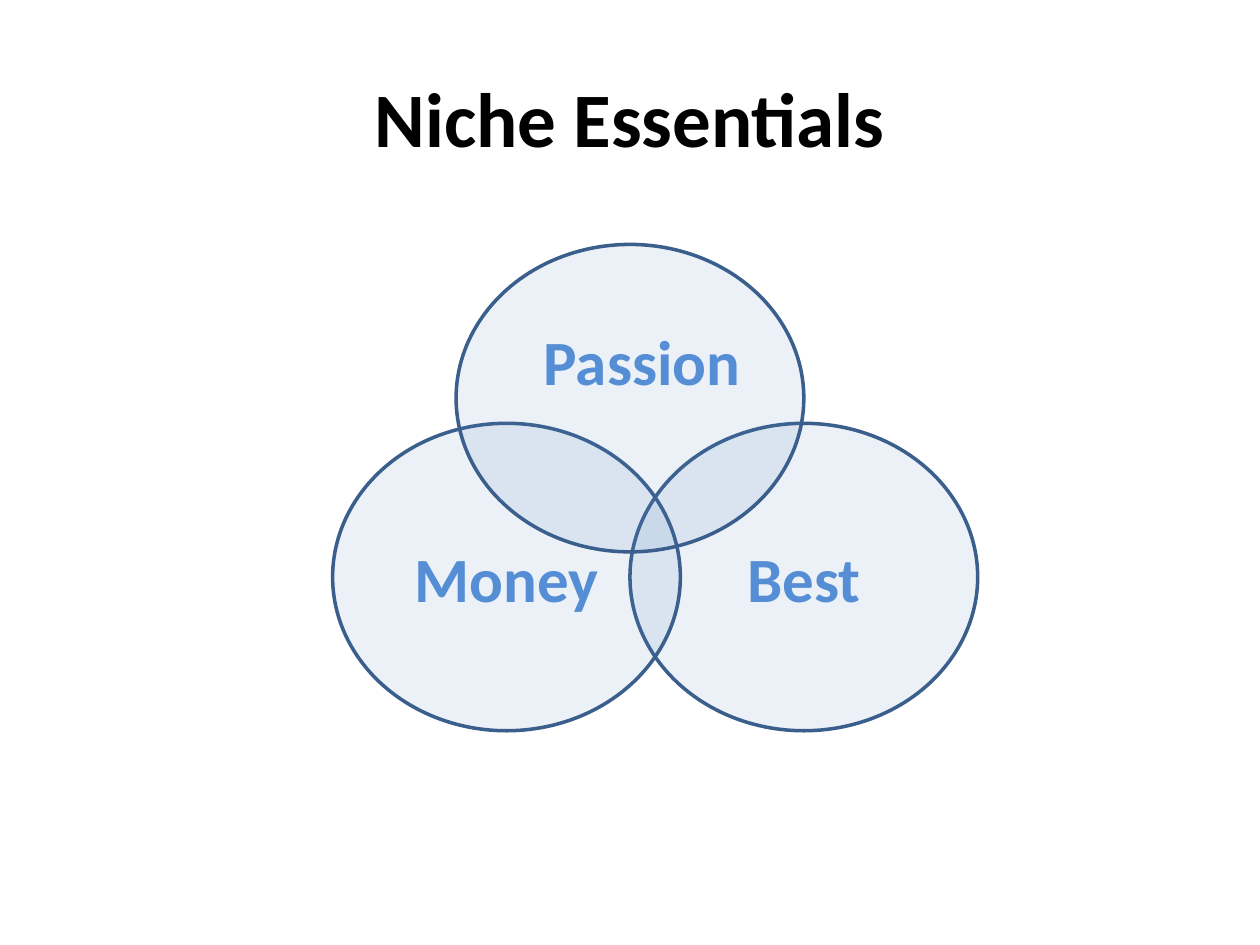
import pptx
import pptx.util
import pptx.dml.color
import pptx.enum.shapes
import pptx.enum.text
import pptx.oxml
import pptx.oxml.ns
from pptx.util import Inches

COLORS = {"fill": "4F81BD", "line": "3A5F8C", "label": "558ED5", "title": "000000"}
FONT = "Calibri"
WIDTH, HEIGHT = 2.76, 2.44
ALIGN = pptx.enum.text.PP_ALIGN


def rgb(name):
    return pptx.dml.color.RGBColor.from_string(COLORS[name])


def write(shape, text, size=36, color="label", align=ALIGN.CENTER, lift=0):
    """Set bold text in the middle of a shape; lift is extra room below it."""
    frame = shape.text_frame
    frame.word_wrap = True
    frame.vertical_anchor = pptx.enum.text.MSO_ANCHOR.MIDDLE
    frame.margin_bottom = Inches(0.05 + lift)
    para = frame.paragraphs[0]
    para.alignment = align
    run = para.add_run()
    run.text = text
    run.font.name = FONT
    run.font.size = pptx.util.Pt(size)
    run.font.bold = True
    run.font.color.rgb = rgb(color)


def fade(shape, percent):
    """Set the opacity of a solid fill."""
    tag = pptx.oxml.ns.qn("a:srgbClr")
    color = next(shape.fill._xPr.iter(tag))
    alpha = pptx.oxml.parse_xml(
        f'<a:alpha {pptx.oxml.ns.nsdecls("a")} val="{percent * 1000}"/>'
    )
    color.append(alpha)


def add_circle(slide, text, left, top, **style):
    kind = pptx.enum.shapes.MSO_SHAPE.FLOWCHART_CONNECTOR
    circle = slide.shapes.add_shape(
        kind, Inches(left), Inches(top), Inches(WIDTH), Inches(HEIGHT)
    )
    circle.shadow.inherit = False
    circle.fill.solid()
    circle.fill.fore_color.rgb = rgb("fill")
    fade(circle, 11)
    circle.line.color.rgb = rgb("line")
    circle.line.width = pptx.util.Pt(2)
    write(circle, text, **style)


def add_title(slide, text):
    box = slide.shapes.add_textbox(Inches(0.5), Inches(0.3), Inches(9), Inches(1.25))
    write(box, text, size=44, color="title")


def main():
    deck = pptx.Presentation()
    deck.slide_width, deck.slide_height = Inches(10), Inches(7.5)
    slide = deck.slides.add_slide(deck.slide_layouts[6])
    add_circle(slide, "Best", 5, 3.36)
    add_title(slide, "Niche Essentials")
    add_circle(slide, "Money", 2.64, 3.36)
    add_circle(slide, "Passion", 3.62, 1.94, align=ALIGN.RIGHT, lift=0.6)
    deck.save("out.pptx")


if __name__ == "__main__":
    main()
